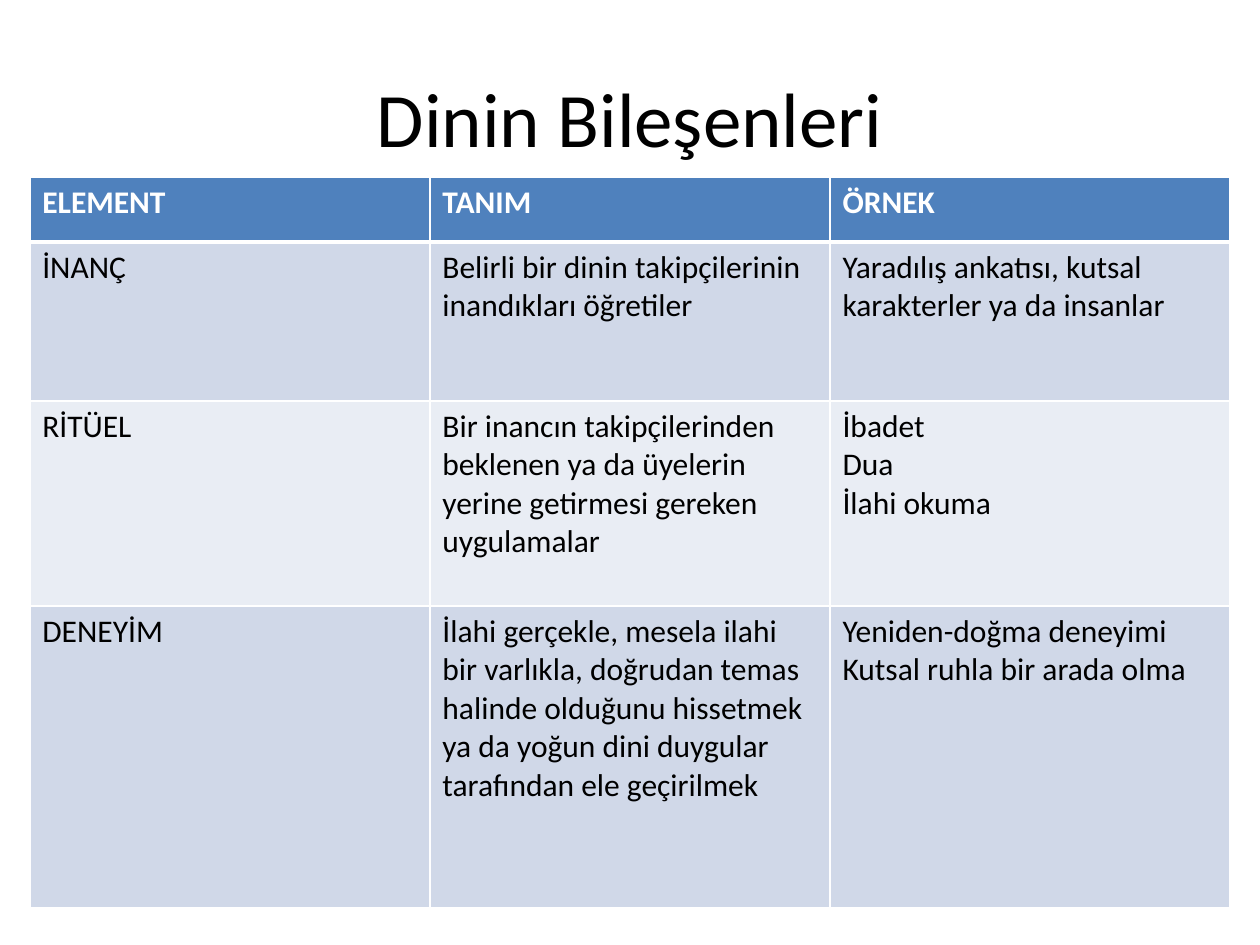
from lxml.etree import SubElement
from pptx import Presentation
from pptx.dml.color import RGBColor
from pptx.enum.text import MSO_ANCHOR, PP_ALIGN
from pptx.oxml.ns import qn
from pptx.util import Cm, Pt

FONT = "Calibri"
WHITE, BLACK, BLUE = "FFFFFF", "000000", "4F81BD"
BANDS = ["D0D8E8", "E9EDF4"]
HEIGHTS = [1.3, 3.2, 4.14, 6.07]

# Each cell is a list of paragraphs
ROWS = [
    [["ELEMENT"], ["TANIM"], ["ÖRNEK"]],
    [["İNANÇ"],
     ["Belirli bir dinin takipçilerinin inandıkları öğretiler"],
     ["Yaradılış ankatısı, kutsal karakterler ya da insanlar"]],
    [["RİTÜEL"],
     ["Bir inancın takipçilerinden beklenen ya da üyelerin yerine "
      "getirmesi gereken uygulamalar"],
     ["İbadet", "Dua", "İlahi okuma"]],
    [["DENEYİM"],
     ["İlahi gerçekle, mesela ilahi bir varlıkla, doğrudan temas halinde "
      "olduğunu hissetmek ya da yoğun dini duygular tarafından ele geçirilmek"],
     ["Yeniden-doğma deneyimi", "Kutsal ruhla bir arada olma"]],
]


def color(code):
    return RGBColor.from_string(code)


def write(frame, lines, size, code, bold=False, align=PP_ALIGN.LEFT):
    for i, line in enumerate(lines):
        para = frame.add_paragraph() if i else frame.paragraphs[0]
        para.alignment = align
        run = para.add_run()
        run.text = line
        font = run.font
        font.name, font.size, font.bold = FONT, Pt(size), bold
        font.color.rgb = color(code)


def border(cell, top, base):
    """Draw white cell edges; call before the fill, as the schema orders."""
    props = cell._tc.get_or_add_tcPr()
    for side, width in zip("LRTB", (1, 1, top, base)):
        line = SubElement(props, qn(f"a:ln{side}"), w=str(Pt(width)))
        fill = SubElement(line, qn("a:solidFill"))
        SubElement(fill, qn("a:srgbClr"), val=WHITE)


def title(slide, left, top, width, height):
    box = slide.shapes.add_textbox(Cm(left), Cm(top), Cm(width), Cm(height))
    frame = box.text_frame
    frame.word_wrap = True
    frame.vertical_anchor = MSO_ANCHOR.MIDDLE
    write(frame, ["Dinin Bileşenleri"], 44, BLACK, align=PP_ALIGN.CENTER)


def grid(slide, left, top, width, height):
    count = len(ROWS[0])
    table = slide.shapes.add_table(len(ROWS), count, Cm(left), Cm(top),
                                   Cm(width), Cm(height)).table
    for col in table.columns:
        col.width = Cm(width / count)
    for r, row in enumerate(ROWS):
        table.rows[r].height = Cm(height * HEIGHTS[r] / sum(HEIGHTS))
        head = r == 0
        for c, lines in enumerate(row):
            cell = table.cell(r, c)
            border(cell, 3 if r == 1 else 1, 3 if head else 1)
            cell.fill.solid()
            cell.fill.fore_color.rgb = color(BLUE if head else BANDS[(r - 1) % 2])
            write(cell.text_frame, lines, 18, WHITE if head else BLACK, head)


def main():
    deck = Presentation()
    deck.slide_width, deck.slide_height = Cm(25.4), Cm(19.05)
    slide = deck.slides.add_slide(deck.slide_layouts[6])
    # Heading
    title(slide, 1.27, 0.76, 22.86, 3.18)
    # Table of components
    grid(slide, 0.6, 3.58, 24.2, sum(HEIGHTS))
    deck.save("out.pptx")


if __name__ == "__main__":
    main()
